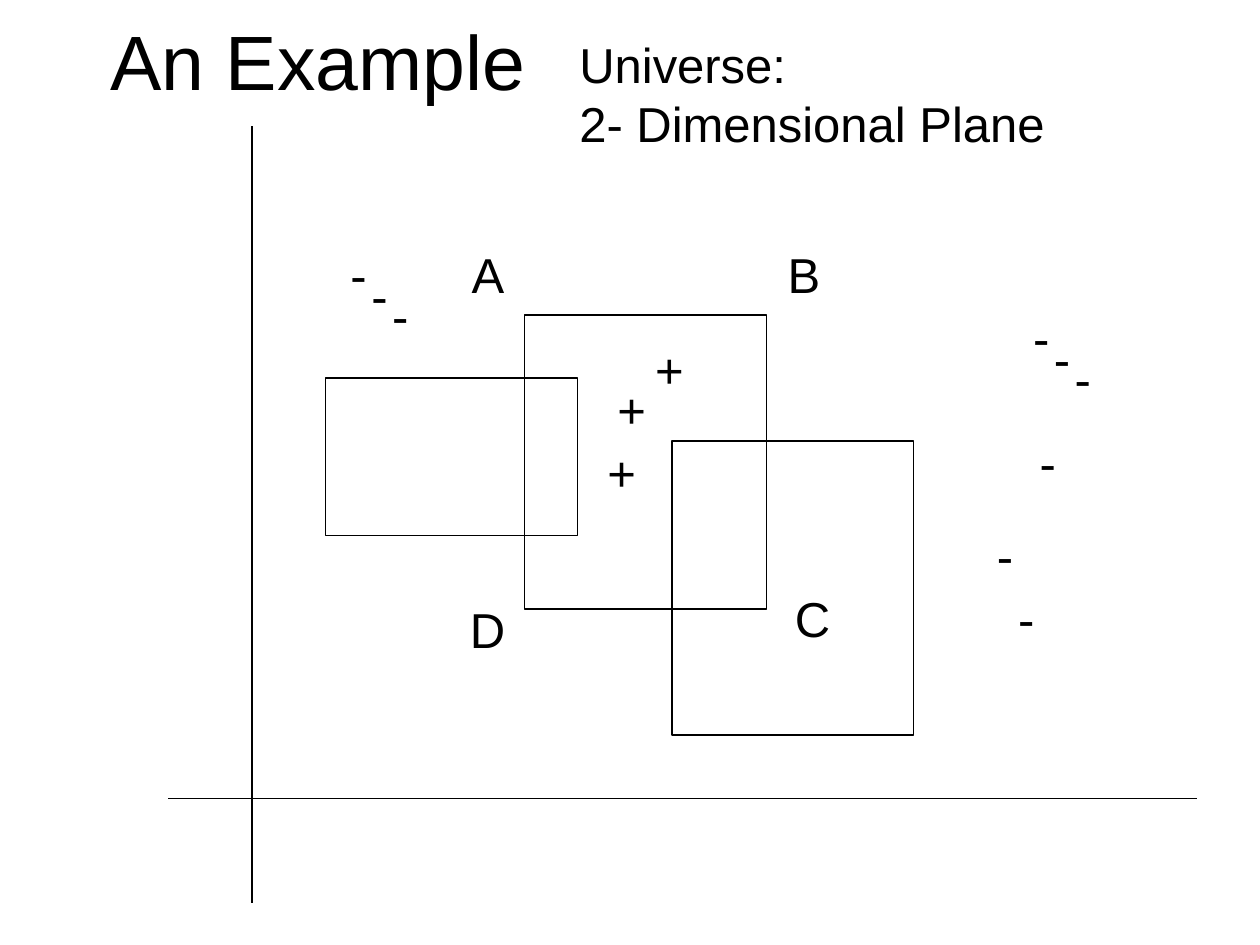
from dataclasses import dataclass

from lxml import etree
from pptx import Presentation
from pptx import util as u
from pptx.dml.color import RGBColor
from pptx.enum import shapes, text
from pptx.oxml import ns

COLOURS = {"ink": "000000", "page": "FFFFFF"}
FONT = "Arial"
LINE_WIDTH = u.Pt(0.75)
LABEL_SIZE = 28
LABEL_HEIGHT = 1.44
TRAIL_STEP = 0.42


@dataclass(frozen=True)
class Area:
    """A rectangle in centimetres."""
    left: float
    top: float
    width: float
    height: float

    def lengths(self) -> tuple:
        return tuple(u.Cm(n) for n in (self.left, self.top, self.width, self.height))


@dataclass(frozen=True)
class Label:
    words: str
    left: float
    top: float
    width: float


@dataclass(frozen=True)
class Axis:
    x1: float
    y1: float
    x2: float
    y2: float


def minus_trail(left: float, top: float, count: int = 3) -> list[Label]:
    """Minus signs that step down to the right."""
    return [Label("-", left + i * TRAIL_STEP, top + i * TRAIL_STEP, 0.84)
            for i in range(count)]


TITLE_AREA = Area(1.93, 0.15, 8.97, 2.13)
UNIVERSE_AREA = Area(11.43, 0.58, 13.31, 2.62)
REGIONS = [
    Area(10.58, 6.35, 4.87, 5.93),
    Area(6.56, 7.62, 5.08, 3.18),
    Area(13.55, 8.89, 4.87, 5.93),
]
CORNERS = [
    Label("A", 9.25, 4.8, 1.17),
    Label("B", 15.62, 4.8, 1.17),
    Label("D", 9.22, 11.96, 1.22),
    Label("C", 15.77, 11.73, 1.22),
]
POSITIVES = [Label("+", left, top, 1.09)
             for left, top in [(12.95, 6.71), (12.19, 7.52), (11.99, 8.79)]]
AXES = [Axis(5.08, 2.54, 5.08, 18.2), Axis(3.39, 16.09, 24.13, 16.09)]
NEGATIVES = [
    *minus_trail(6.81, 4.8),
    *minus_trail(20.57, 6.07),
    *minus_trail(20.7, 8.59, 1),
    *minus_trail(19.84, 10.46, 1),
    *minus_trail(20.27, 11.73, 1),
]


def colour(name: str) -> RGBColor:
    return RGBColor.from_string(COLOURS[name])


def write(box, lines: list[str], size: int, align, wrap: bool = False) -> None:
    frame = box.text_frame
    frame.text = "\n".join(lines)
    frame.word_wrap = wrap
    frame.auto_size = text.MSO_AUTO_SIZE.SHAPE_TO_FIT_TEXT
    frame.vertical_anchor = text.MSO_ANCHOR.TOP
    for para in frame.paragraphs:
        para.alignment = align
        para.font.name = FONT
        para.font.size = u.Pt(size)
        para.font.color.rgb = colour("ink")


def add_title(page, words: str) -> None:
    title = page.shapes.title
    title.left, title.top, title.width, title.height = TITLE_AREA.lengths()
    write(title, [words], 44, text.PP_ALIGN.CENTER)


def add_region(page, area: Area) -> None:
    region = page.shapes.add_shape(shapes.MSO_SHAPE.RECTANGLE, *area.lengths())
    region.shadow.inherit = False
    region.fill.background()
    region.line.color.rgb = colour("ink")
    region.line.width = LINE_WIDTH


def add_label(page, label: Label) -> None:
    area = Area(label.left, label.top, label.width, LABEL_HEIGHT)
    box = page.shapes.add_textbox(*area.lengths())
    write(box, [label.words], LABEL_SIZE, text.PP_ALIGN.CENTER)


def add_axis(page, axis: Axis) -> None:
    ends = [u.Cm(n) for n in (axis.x1, axis.y1, axis.x2, axis.y2)]
    line = page.shapes.add_connector(shapes.MSO_CONNECTOR.STRAIGHT, *ends)
    line.line.color.rgb = colour("ink")
    line.line.width = LINE_WIDTH
    etree.SubElement(line._element.spPr, ns.qn("a:effectLst"))


def main() -> None:
    deck = Presentation()
    deck.slide_width, deck.slide_height = u.Cm(25.4), u.Cm(19.05)
    page = deck.slides.add_slide(deck.slide_layouts.get_by_name("Title Only"))
    page.background.fill.solid()
    page.background.fill.fore_color.rgb = colour("page")

    add_title(page, "An Example")
    for area in REGIONS:
        add_region(page, area)
    for label in CORNERS + POSITIVES:
        add_label(page, label)
    for axis in AXES:
        add_axis(page, axis)
    for label in NEGATIVES:
        add_label(page, label)
    universe = page.shapes.add_textbox(*UNIVERSE_AREA.lengths())
    write(universe, ["Universe:", "2- Dimensional Plane"], LABEL_SIZE,
          text.PP_ALIGN.LEFT, wrap=True)

    deck.save("out.pptx")


if __name__ == "__main__":
    main()
